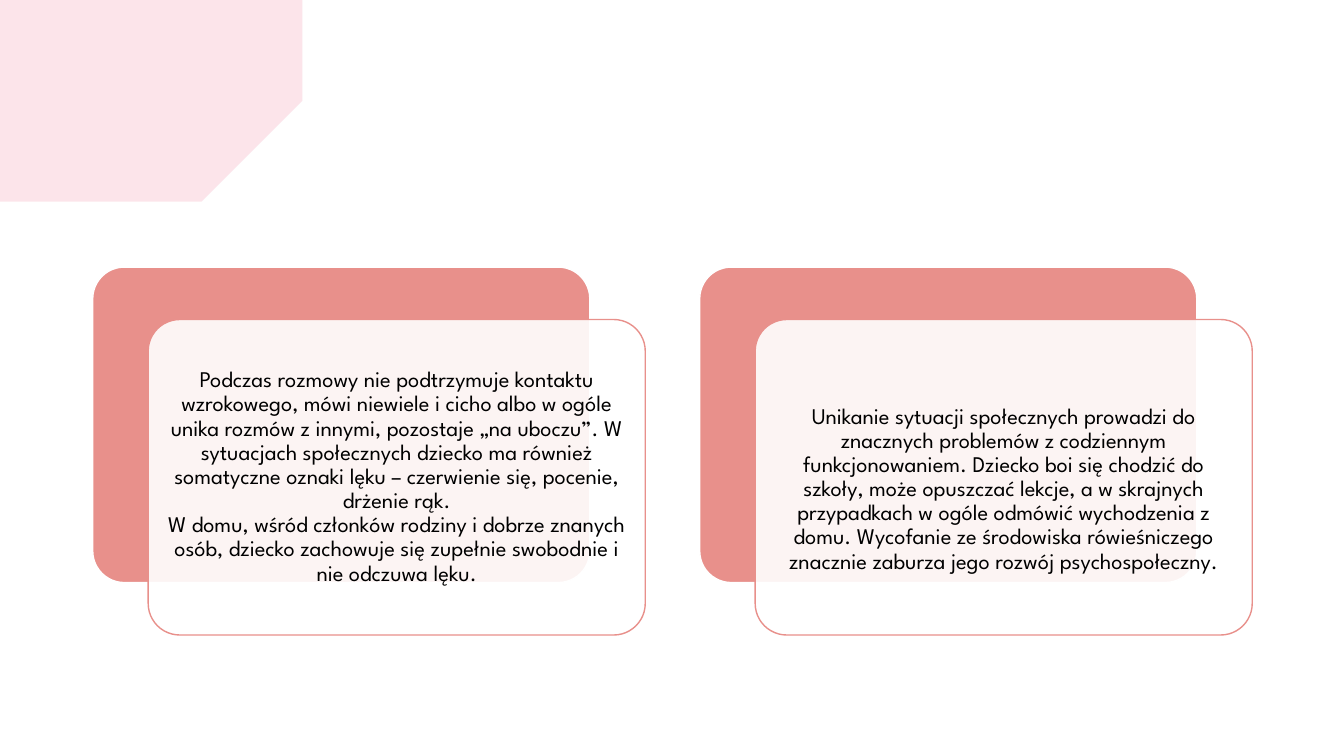
"""Build a slide with a pink brush stroke and two layered text cards."""
from lxml import etree
from pptx import Presentation
from pptx.dml.color import RGBColor
from pptx.enum.shapes import MSO_SHAPE
from pptx.enum.text import MSO_ANCHOR, PP_ALIGN
from pptx.oxml.ns import qn
from pptx.util import Inches, Pt

ROUNDED = MSO_SHAPE.ROUNDED_RECTANGLE
MIDDLE = MSO_ANCHOR.MIDDLE
CENTER = PP_ALIGN.CENTER
PINK = RGBColor(0xF0, 0x7C, 0x98)
CORAL = RGBColor(0xE8, 0x90, 0x8B)
WHITE = RGBColor(0xFF, 0xFF, 0xFF)
BLACK = RGBColor(0, 0, 0)

CARD_W, CARD_H = 4.93, 3.13
CARD_LEFT, CARD_TOP, CARD_PITCH = 0.92, 2.65, 6.02
OFFSET_X, OFFSET_Y = 0.55, 0.52
INSET, BLANK_LINE = 0.07, 0.24

STROKE_EDGE = [
    (0.25, 0.37), (0.66, 0.38), (1.51, 0.38), (1.94, 0.41), (2.64, 0.41),
    (2.8, 0.47), (2.55, 0.54), (2.56, 0.59), (2.62, 0.62), (2.38, 0.66),
    (2.46, 0.68), (2.75, 0.74), (2.51, 0.75), (2.73, 0.81), (2.88, 0.83),
    (2.87, 0.88), (2.63, 0.88), (2.85, 0.93), (3.3, 0.94), (3.21, 0.97),
    (3.18, 1.06), (3.07, 1.11), (3, 1.13), (2.83, 1.16), (2.8, 1.2),
    (2.74, 1.28), (3.08, 1.28), (2.69, 1.38), (2.73, 1.42), (2.52, 1.48),
    (2.63, 1.48), (1.97, 1.72), (1.02, 1.88), (0.65, 1.91), (0.23, 1.9),
    (0, 1.88),
]

CARDS = [
    ("Podczas rozmowy nie podtrzymuje kontaktu wzrokowego, mówi niewiele i cicho "
     "albo w ogóle unika rozmów z innymi, pozostaje „na uboczu”. W sytuacjach "
     "społecznych dziecko ma również somatyczne oznaki lęku – czerwienie się, "
     "pocenie, drżenie rąk.\v"
     "W domu, wśród członków rodziny i dobrze znanych osób, dziecko zachowuje się "
     "zupełnie swobodnie i nie odczuwa lęku.", 0),
    ("Unikanie sytuacji społecznych prowadzi do znacznych problemów z codziennym "
     "funkcjonowaniem. Dziecko boi się chodzić do szkoły, może opuszczać lekcje, "
     "a w skrajnych przypadkach w ogóle odmówić wychodzenia z domu. Wycofanie ze "
     "środowiska rówieśniczego znacznie zaburza jego rozwój psychospołeczny.",
     BLANK_LINE),
]


def paint(shape, color, opacity=100):
    """Give the shape a flat fill of the stated opacity in percent."""
    shape.shadow.inherit = False
    shape.fill.solid()
    shape.fill.fore_color.rgb = color
    if opacity < 100:
        tint = shape.fill._xPr.find(".//" + qn("a:srgbClr"))
        etree.SubElement(tint, qn("a:alpha"), val=str(opacity * 1000))


def add_panel(left, top, fill, outline, opacity=100):
    """Add one rounded card panel."""
    panel = slide.shapes.add_shape(
        ROUNDED, Inches(left), Inches(top), Inches(CARD_W), Inches(CARD_H))
    panel.adjustments[0] = 0.1
    paint(panel, fill, opacity)
    panel.line.color.rgb = outline
    panel.line.width = Pt(1)
    return panel


prs = Presentation()
prs.slide_width, prs.slide_height = Inches(13.33), Inches(7.5)
slide = prs.slides.add_slide(prs.slide_layouts[6])
slide.background.fill.solid()
slide.background.fill.fore_color.rgb = WHITE

builder = slide.shapes.build_freeform(0, 0.34, scale=Inches(1))
builder.add_line_segments(STROKE_EDGE, close=True)
brush_stroke = builder.convert_to_shape()
paint(brush_stroke, PINK, 20)
brush_stroke.line.fill.background()

for column, (description, extra_top) in enumerate(CARDS):
    left = CARD_LEFT + column * CARD_PITCH
    add_panel(left, CARD_TOP, CORAL, WHITE)
    front = add_panel(left + OFFSET_X, CARD_TOP + OFFSET_Y, WHITE, CORAL, 90)
    frame = front.text_frame
    frame.word_wrap = True
    frame.vertical_anchor = MIDDLE
    frame.margin_left = frame.margin_right = frame.margin_bottom = Inches(INSET)
    frame.margin_top = Inches(INSET + extra_top)
    frame.text = description
    paragraph = frame.paragraphs[0]
    paragraph.alignment = CENTER
    paragraph.line_spacing = 0.9
    for run in paragraph.runs:
        run.font.name = "League Spartan"
        run.font.size = Pt(16)
        run.font.color.rgb = BLACK

prs.save("out.pptx")
